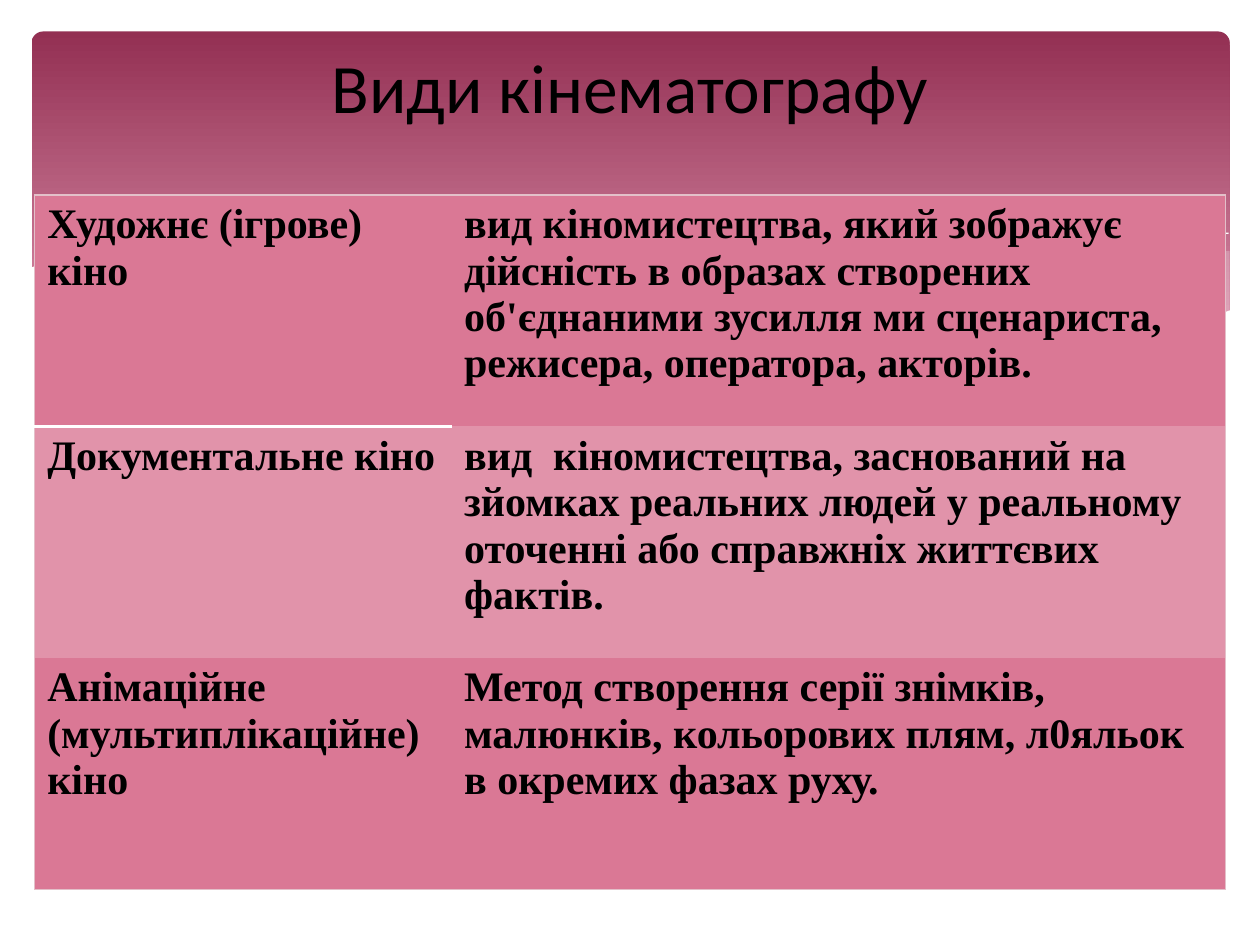
from lxml.etree import SubElement
from pptx import Presentation
from pptx.dml.color import RGBColor
from pptx.enum.shapes import MSO_SHAPE
from pptx.enum.text import MSO_ANCHOR, PP_ALIGN
from pptx.oxml.ns import qn
from pptx.util import Pt

WHITE, BLACK = "FFFFFF", "000000"
MIST = "F4E7ED"
PANEL_TOP, PANEL_BOTTOM = "933053", "DA8EA9"
ROW_FILLS = ["DA7895", "E193AA"]
FRAME = ("E3C0C9", 0.75)
DIVIDER = (WHITE, 2)

# Wave outlines, in points
RIGHT_WAVE = [
    (702, 143.3), (663, 150.5), (620, 160.6), (542, 178.6), (476, 190.8),
    (517, 195.8), (554, 199.4), (586, 200.2), (621, 198), (652, 193.7),
    (678, 186.5), (702.7, 177.8), (702.7, 143.3)]
MIDDLE_WAVE = [
    (643, 196.6), (603, 190.8), (558, 182.9), (508, 172.8), (453, 159.8),
    (410, 149.8), (370, 142.6), (335, 137.5), (302, 134.6), (260, 133.9),
    (225, 135.4), (206, 137.5), (246, 143.3), (291, 151.9), (323, 159.8),
    (382, 172.8), (433, 183.6), (479, 191.5), (520, 197.3), (565, 200.2),
    (603, 200.2)]
LONG_LINE = [
    (222.5, 140.4), (248, 136.8), (289, 134.6), (338, 136.1), (384, 139.7),
    (438, 146.9), (500, 157.7), (572, 173.5), (653, 195.8)]
SHORT_LINE = [
    (441.4, 185), (500, 169.2), (559, 155.5), (623, 143.3), (665, 136.8),
    (702, 133.2)]
WHITE_WAVE = [
    (703.4, 177.1), (684, 184.3), (655, 192.2), (621, 197.3), (582, 199.4),
    (536, 197.3), (481, 190.8), (417, 180), (362, 167.8), (322, 158.4),
    (263, 145.4), (210, 137.5), (166, 133.2), (127, 132.5), (95, 133.9),
    (68, 137.5), (42.5, 143.3), (16.6, 153.4), (16.6, 236.9), (703.4, 236.9)]

FILM_KINDS = [
    ("Художнє (ігрове)  кіно",
     "вид кіномистецтва, який зображує дійсність в образах створених "
     "об'єднаними зусилля ми сценариста, режисера, оператора, акторів."),
    ("Документальне кіно",
     "вид  кіномистецтва, заснований на зйомках реальних людей у реальному "
     "оточенні або справжніх життєвих фактів."),
    ("Анімаційне (мультиплікаційне)  кіно",
     "Метод створення серії знімків, малюнків, кольорових плям, л0яльок  "
     "в окремих фазах руху."),
]


def color(value):
    return RGBColor.from_string(value)


class Page:
    title_font = "Calibri"
    table_font = "Times New Roman"

    def __init__(self, deck):
        self.slide = deck.slides.add_slide(deck.slide_layouts[5])
        self.shapes = self.slide.shapes

    def format_text(self, frame, font, size, bold=False):
        for para in frame.paragraphs:
            for span in para.runs:
                span.font.name = font
                span.font.size = Pt(size)
                span.font.bold = bold
                span.font.color.rgb = color(BLACK)

    def panel(self, left, top, width, height):
        shape = self.shapes.add_shape(
            MSO_SHAPE.ROUNDED_RECTANGLE, Pt(left), Pt(top), Pt(width), Pt(height))
        shape.adjustments[0] = 0.034
        shape.shadow.inherit = False
        shape.line.fill.background()
        shape.fill.gradient()
        shape.fill.gradient_angle = 270
        stops = zip(shape.fill.gradient_stops,
                    [(0, PANEL_TOP), (0.9, PANEL_BOTTOM)])
        for stop, (position, value) in stops:
            stop.position = position
            stop.color.rgb = color(value)

    def outline(self, points, closed):
        start, *rest = [(Pt(x), Pt(y)) for x, y in points]
        builder = self.shapes.build_freeform(*start)
        builder.add_line_segments(rest, close=closed)
        shape = builder.convert_to_shape()
        shape.shadow.inherit = False
        return shape

    def wave(self, points, value, opacity=100):
        shape = self.outline(points, closed=True)
        shape.line.fill.background()
        shape.fill.solid()
        shape.fill.fore_color.rgb = color(value)
        if opacity < 100:
            tint = shape.element.spPr.find(".//" + qn("a:srgbClr"))
            SubElement(tint, qn("a:alpha"), val=str(opacity * 1000))

    def curve(self, points):
        shape = self.outline(points, closed=False)
        shape.fill.background()
        shape.line.color.rgb = color(WHITE)
        shape.line.width = Pt(0)

    def title(self, text, left, top, width, height):
        box = self.shapes.title
        box.left, box.top = Pt(left), Pt(top)
        box.width, box.height = Pt(width), Pt(height)
        frame = box.text_frame
        frame.text = text
        frame.vertical_anchor = MSO_ANCHOR.MIDDLE
        frame.paragraphs[0].alignment = PP_ALIGN.CENTER
        self.format_text(frame, self.title_font, 39.6)
        # Bring the title in front of the backdrop
        box.element.getparent().append(box.element)

    def cell_borders(self, cell, edges):
        properties = cell._tc.get_or_add_tcPr()
        for index, name in enumerate(("lnL", "lnR", "lnT", "lnB")):
            line = properties.makeelement(qn("a:" + name))
            properties.insert(index, line)
            if edges[index]:
                value, width = edges[index]
                line.set("w", str(Pt(width)))
                fill = SubElement(line, qn("a:solidFill"))
                SubElement(fill, qn("a:srgbClr"), val=value)
            else:
                SubElement(line, qn("a:noFill"))

    def table(self, rows, left, top, widths, row_height):
        last_row, last_column = len(rows) - 1, len(widths) - 1
        table = self.shapes.add_table(
            len(rows), len(widths), Pt(left), Pt(top),
            Pt(sum(widths)), Pt(row_height * len(rows))).table
        for column, width in zip(table.columns, widths):
            column.width = Pt(width)
        for r, texts in enumerate(rows):
            table.rows[r].height = Pt(row_height)
            for c, text in enumerate(texts):
                cell = table.cell(r, c)
                cell.text_frame.text = text
                self.format_text(cell.text_frame, self.table_font, 24, bold=True)
                cell.fill.solid()
                cell.fill.fore_color.rgb = color(ROW_FILLS[r % 2])
                # Frame outside, one divider under the first label
                above = DIVIDER if (r, c) == (1, 0) else None
                below = DIVIDER if (r, c) == (0, 0) else None
                self.cell_borders(cell, [
                    FRAME if c == 0 else None,
                    FRAME if c == last_column else None,
                    FRAME if r == 0 else above,
                    FRAME if r == last_row else below])


def main():
    deck = Presentation()
    deck.slide_width, deck.slide_height = Pt(720), Pt(540)
    page = Page(deck)

    # Backdrop
    page.panel(18, 18, 684.7, 194.4)
    page.wave(RIGHT_WAVE, MIST, 29)
    page.wave(MIDDLE_WAVE, MIST, 40)
    page.curve(LONG_LINE)
    page.curve(SHORT_LINE)
    page.wave(WHITE_WAVE, WHITE)

    # Title and table of film kinds
    page.title("Види кінематографу", 36, 26.6, 648, 44.6)
    page.table(FILM_KINDS, 19.8, 111.4, [238.2, 442.2], 132.3)

    deck.save("out.pptx")


if __name__ == "__main__":
    main()
